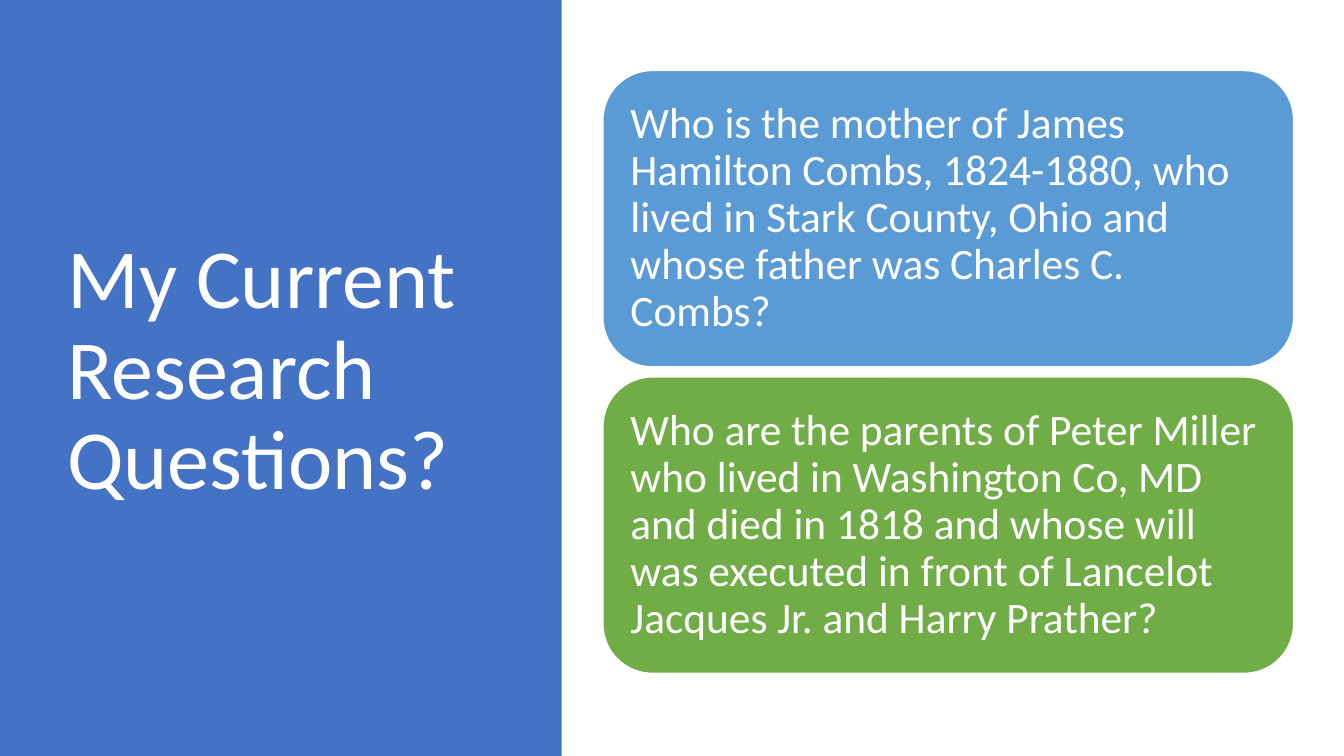
from pptx import Presentation
from pptx.dml.color import RGBColor
from pptx.enum.shapes import MSO_SHAPE
from pptx.enum.text import MSO_ANCHOR, PP_ALIGN
from pptx.util import Inches, Pt

WHITE = RGBColor(0xFF, 0xFF, 0xFF)
PANEL_BLUE = RGBColor(0x44, 0x72, 0xC4)
CARD_BLUE = RGBColor(0x5B, 0x9B, 0xD5)
CARD_GREEN = RGBColor(0x70, 0xAD, 0x47)

# Content
TITLE = "My Current Research Questions?"
QUESTIONS = [
    ("Who is the mother of James Hamilton Combs, 1824-1880, who lived in "
     "Stark County, Ohio and whose father was Charles C. Combs?", CARD_BLUE),
    ("Who are the parents of Peter Miller who lived in Washington Co, MD and "
     "died in 1818 and whose will was executed in front of Lancelot Jacques "
     "Jr. and Harry Prather?", CARD_GREEN),
]

# Layout in inches
SLIDE_WIDTH, SLIDE_HEIGHT = 13.33, 7.5
PANEL_WIDTH = 5.57
CARD_LEFT, CARD_TOP = 5.98, 0.7
CARD_WIDTH, CARD_HEIGHT = 6.85, 2.94
CARD_PITCH = CARD_HEIGHT + 0.1


def write_text(shape, text, size, inset_x, inset_y):
    frame = shape.text_frame
    frame.text = text
    frame.word_wrap = True
    frame.vertical_anchor = MSO_ANCHOR.MIDDLE
    frame.margin_left = frame.margin_right = Inches(inset_x)
    frame.margin_top = frame.margin_bottom = Inches(inset_y)
    paragraph = frame.paragraphs[0]
    paragraph.alignment = PP_ALIGN.LEFT
    paragraph.line_spacing = 0.9
    font = paragraph.runs[0].font
    font.name, font.size = "Calibri", Pt(size)
    font.color.rgb = WHITE


def add_filled_shape(slide, kind, box, color):
    shape = slide.shapes.add_shape(kind, *map(Inches, box))
    shape.shadow.inherit = False
    shape.fill.solid()
    shape.fill.fore_color.rgb = color
    return shape


presentation = Presentation()
presentation.slide_width = Inches(SLIDE_WIDTH)
presentation.slide_height = Inches(SLIDE_HEIGHT)
slide = presentation.slides.add_slide(presentation.slide_layouts[6])

# Left panel with title
panel = add_filled_shape(slide, MSO_SHAPE.RECTANGLE,
                         (0, 0, PANEL_WIDTH, SLIDE_HEIGHT), PANEL_BLUE)
panel.line.fill.background()
title = slide.shapes.add_textbox(*map(Inches, (0.57, 0.68, 4.16, 6.02)))
write_text(title, TITLE, 60, 0.1, 0.05)

# Question cards
for row, (question, color) in enumerate(QUESTIONS):
    box = (CARD_LEFT, CARD_TOP + row * CARD_PITCH, CARD_WIDTH, CARD_HEIGHT)
    card = add_filled_shape(slide, MSO_SHAPE.ROUNDED_RECTANGLE, box, color)
    card.line.color.rgb = WHITE
    card.line.width = Pt(1)
    write_text(card, question, 31, 0.13, 0.13)

presentation.save("out.pptx")
